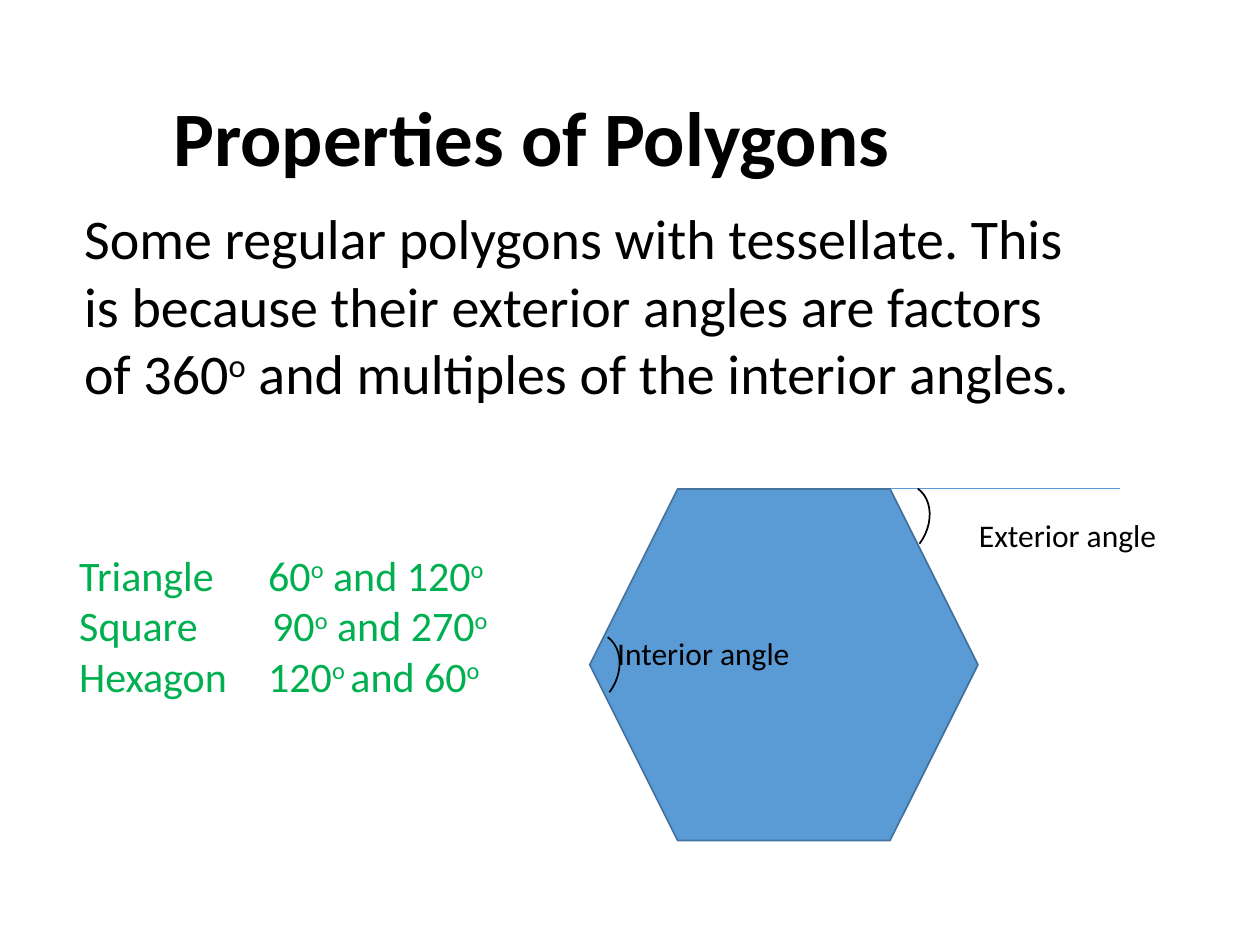
from lxml.etree import SubElement
from pptx import Presentation
from pptx.dml.color import RGBColor
from pptx.enum.shapes import MSO_CONNECTOR, MSO_SHAPE
from pptx.enum.text import MSO_ANCHOR, PP_ALIGN
from pptx.oxml.ns import qn
from pptx.util import Pt

BLACK = RGBColor(0x00, 0x00, 0x00)
GREEN = RGBColor(0x00, 0xB0, 0x50)
BLUE = RGBColor(0x5B, 0x9B, 0xD5)
DARK_BLUE = RGBColor(0x43, 0x73, 0x9E)

TITLE = {"name": "Calibri", "size": Pt(44), "bold": True}
STATEMENT = {"name": "Calibri", "size": Pt(32)}
ANGLES = {"name": "Calibri", "size": Pt(24)}
LABEL = {"name": "Calibri", "size": Pt(18)}

ANGLE_ROWS = [
    ("Triangle\t60^o^ and 120^o", 108),
    ("Square\t90^o^ and 270^o", 110.3),
    ("Hexagon\t120^o ^and 60^o", 108),
]


def add_text_frame(slide, box):
    text_frame = slide.shapes.add_textbox(*map(Pt, box)).text_frame
    text_frame.word_wrap = True
    return text_frame


def write_text(paragraph, text, font_format, color=BLACK):
    for index, part in enumerate(text.split("^")):
        run = paragraph.add_run()
        run.text = part
        for name, value in font_format.items():
            setattr(run.font, name, value)
        run.font.color.rgb = color
        if index % 2:
            run._r.get_or_add_rPr().set("baseline", "30000")


def add_title(slide, box):
    text_frame = add_text_frame(slide, box)
    text_frame.vertical_anchor = MSO_ANCHOR.MIDDLE
    paragraph = text_frame.paragraphs[0]
    paragraph.alignment = PP_ALIGN.CENTER
    paragraph.line_spacing = 0.9
    write_text(paragraph, "Properties of Polygons", TITLE)


def add_paragraph_box(slide, box, text, font_format):
    write_text(add_text_frame(slide, box).paragraphs[0], text, font_format)


def add_angle_list(slide, box):
    text_frame = add_text_frame(slide, box)
    for index, (text, tab_position) in enumerate(ANGLE_ROWS):
        paragraph = text_frame.add_paragraph() if index else text_frame.paragraphs[0]
        tabs = SubElement(paragraph._p.get_or_add_pPr(), qn("a:tabLst"))
        SubElement(tabs, qn("a:tab"), pos=str(Pt(tab_position)), algn="l")
        write_text(paragraph, text, ANGLES, GREEN)


def add_angle_arc(slide, left, top):
    arc = slide.shapes.add_shape(MSO_SHAPE.ARC, Pt(left), Pt(top), Pt(38.9), Pt(49.7))
    arc.shadow.inherit = False
    arc.rotation = 36.2
    arc.fill.background()
    arc.line.color.rgb = BLACK
    arc.line.width = Pt(1)


def add_hexagon_diagram(slide, box):
    left, top, width, height = box
    side = slide.shapes.add_connector(
        MSO_CONNECTOR.STRAIGHT, Pt(left + 50.4), Pt(top), Pt(left + 303), Pt(top))
    side.line.color.rgb = BLUE
    side.line.width = Pt(0.5)
    SubElement(side._element.spPr, qn("a:effectLst"))

    hexagon = slide.shapes.add_shape(MSO_SHAPE.HEXAGON, *map(Pt, box))
    hexagon.shadow.inherit = False
    hexagon.fill.solid()
    hexagon.fill.fore_color.rgb = BLUE
    hexagon.line.color.rgb = DARK_BLUE
    hexagon.line.width = Pt(1)

    for text, label_offset, arc_offset in (
        ("Exterior angle", (215.3, 12.2), (153.4, -5)),
        ("Interior angle", (8.6, 79.2), (-23.8, 79.9)),
    ):
        label_box = (left + label_offset[0], top + label_offset[1], 142.6, 28.8)
        add_paragraph_box(slide, label_box, text, LABEL)
        add_angle_arc(slide, left + arc_offset[0], top + arc_offset[1])


def main():
    presentation = Presentation()
    presentation.slide_width = Pt(720)
    presentation.slide_height = Pt(540)
    slide = presentation.slides.add_slide(presentation.slide_layouts[6])
    add_title(slide, (0, 29.5, 607.7, 103))
    add_paragraph_box(
        slide, (41, 113, 589, 123.8),
        "Some regular polygons with tessellate. This is because their exterior "
        "angles are factors of 360^o^ and multiples of the interior angles.",
        STATEMENT)
    add_hexagon_diagram(slide, (337, 279.4, 221.8, 200.9))
    add_angle_list(slide, (38.2, 310.3, 259.2, 94.3))
    presentation.save("out.pptx")


if __name__ == "__main__":
    main()
